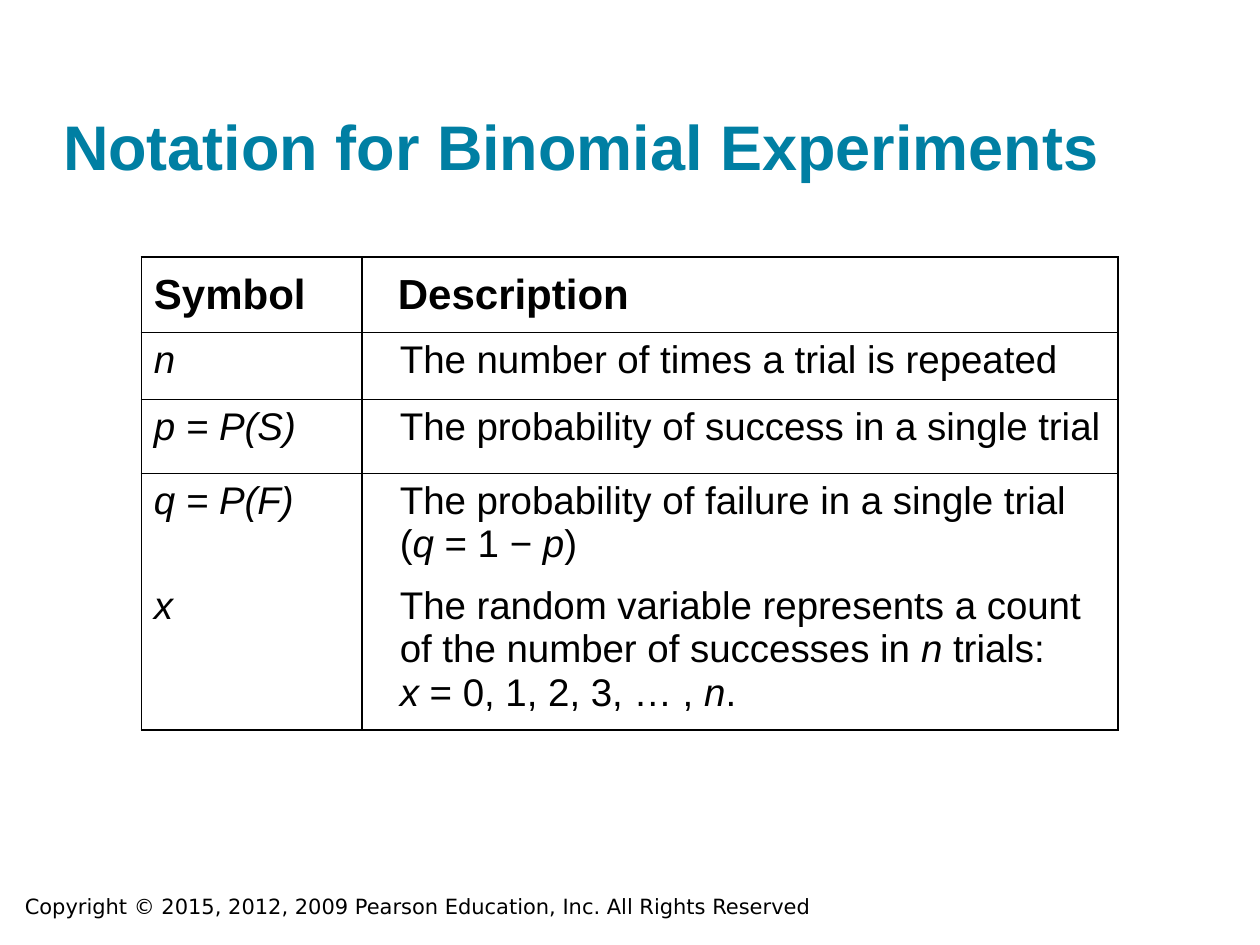
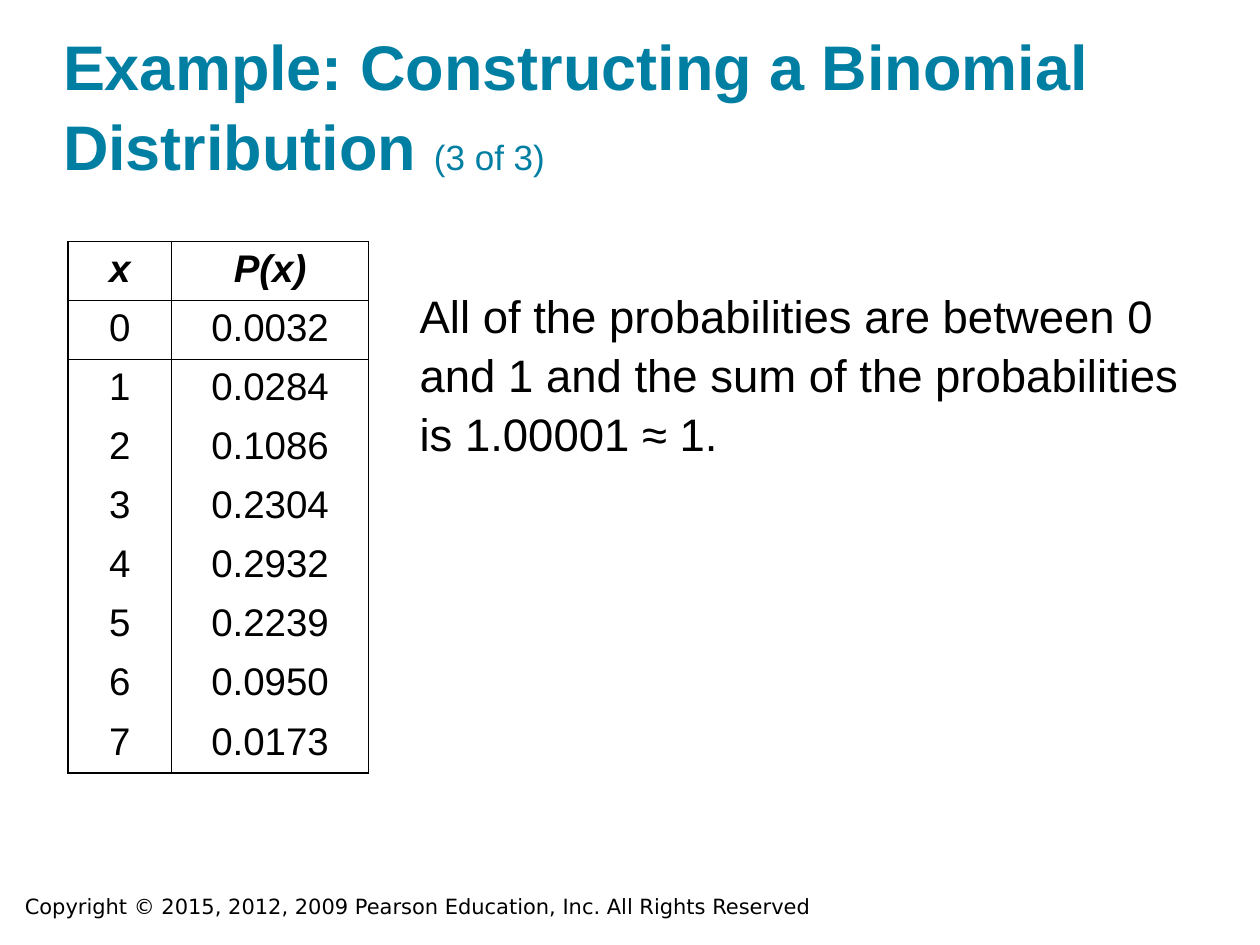
"""Build two slides on binomial experiments: notation and a distribution."""
from lxml.etree import SubElement
from pptx import Presentation
from pptx.dml.color import RGBColor
from pptx.enum.text import MSO_ANCHOR, MSO_AUTO_SIZE, PP_ALIGN
from pptx.oxml.ns import qn
from pptx.util import Cm, Pt

TEAL = RGBColor(0x00, 0x7F, 0xA3)
BLACK = RGBColor(0x00, 0x00, 0x00)
WHITE = RGBColor(0xFF, 0xFF, 0xFF)
FONT = "Arial"
PLAIN = "{2D5ABB26-0587-4C30-8999-92F81FD0307C}"
NOTICE = "Copyright © 2015, 2012, 2009 Pearson Education, Inc. All Rights Reserved"


def write(frame, text, size, color=BLACK, bold=False, font=FONT):
    """Write text into a frame; parts between asterisks are italic."""
    para = frame.paragraphs[0]
    for row, line in enumerate(text.split("\n")):
        if row:
            para.add_line_break()
        for part, words in enumerate(line.split("*")):
            if words:
                run = para.add_run()
                run.text = words
                run.font.name = font
                run.font.size = Pt(size)
                run.font.bold = bold
                run.font.italic = part % 2 == 1
                run.font.color.rgb = color
    return para


def grid(slide, left, top, widths, heights, rows, rules, head):
    """Add a table with upright lines throughout and level lines at rules."""
    frame = slide.shapes.add_table(len(rows), len(widths), Cm(left), Cm(top),
                                   Cm(sum(widths)), Cm(sum(heights)))
    table = frame.table
    table._tbl.tblPr.find(qn("a:tableStyleId")).text = PLAIN
    for col, width in zip(table.columns, widths):
        col.width = Cm(width)
    for r, texts in enumerate(rows):
        table.rows[r].height = Cm(heights[r])
        for c, text in enumerate(texts):
            cell = table.cell(r, c)
            write(cell.text_frame, text, 22 if r else head, bold=r == 0)
            sides = ["lnL", "lnR"]
            if r in rules:
                sides.append("lnT")
            if r + 1 in rules:
                sides.append("lnB")
            for side in sides:
                line = SubElement(cell._tc.get_or_add_tcPr(), qn("a:" + side), w="12700")
                fill = SubElement(line, qn("a:solidFill"))
                SubElement(fill, qn("a:srgbClr"), val=str(BLACK))
            cell.fill.solid()
            cell.fill.fore_color.rgb = WHITE
    return table


deck = Presentation()
deck.slide_width, deck.slide_height = Cm(25.4), Cm(19.05)

titles = [["Notation for Binomial Experiments"],
          ["Example: Constructing a Binomial Distribution ", "(3 of 3)"]]
slides = []
for parts in titles:
    slide = deck.slides.add_slide(deck.slide_layouts[5])
    slides.append(slide)
    title = slide.shapes.title
    title.left, title.top, title.width, title.height = Cm(1.27), Cm(0.65), Cm(22.86), Cm(3.05)
    frame = title.text_frame
    frame.margin_left = frame.margin_right = frame.margin_top = frame.margin_bottom = 0
    frame.vertical_anchor = MSO_ANCHOR.BOTTOM
    frame.auto_size = MSO_AUTO_SIZE.NONE
    for n, part in enumerate(parts):
        para = write(frame, part, 20 if n else 36, TEAL, bold=n == 0)
    para.alignment = PP_ALIGN.LEFT
    para.line_spacing = 1.07
    foot = slide.shapes.add_textbox(Cm(0.25), Cm(17.88), Cm(19.89), Cm(0.77))
    foot.text_frame.word_wrap = True
    write(foot.text_frame, NOTICE, 12, font="DejaVu Sans")

first, second = slides

terms = [
    ("Symbol", "Description"),
    ("*n*", "The number of times a trial is repeated"),
    ("*p = P(S)*", "The probability of success in a single trial"),
    ("*q = P(F)*", "The probability of failure in a single trial\n(*q* = 1 − *p*)"),
    ("*x*", "The random variable represents a count of the number of successes "
            "in *n* trials:\n*x* = 0, 1, 2, 3, … , *n*."),
]
table = grid(first, 2.85, 5.18, [4.45, 15.24], [1.52, 1.35, 1.5, 2.03, 2.94],
             terms, {0, 1, 2, 5}, 24)
for r in range(len(terms)):
    table.cell(r, 1).margin_left = Cm(0.76 if r else 0.72)
for cell in table.rows[0].cells:
    cell.vertical_anchor = MSO_ANCHOR.MIDDLE

odds = ["0.0032", "0.0284", "0.1086", "0.2304", "0.2932", "0.2239", "0.0950", "0.0173"]
rows = [("*x*", "*P(x)*")] + [(str(x), p) for x, p in enumerate(odds)]
table = grid(second, 1.37, 4.87, [2.09, 3.97], [1.19] * len(rows), rows,
             {0, 1, len(rows)}, 22)
for cell in table.iter_cells():
    cell.text_frame.paragraphs[0].alignment = PP_ALIGN.CENTER

note = second.shapes.add_textbox(Cm(8.46), Cm(5.72), Cm(15.67), Cm(3.38))
frame = note.text_frame
frame.word_wrap = True
frame.margin_left = frame.margin_right = frame.margin_top = frame.margin_bottom = 0
para = write(frame, "All of the probabilities are between 0 and 1 and the sum "
                    "of the probabilities is 1.00001 ≈ 1.", 26)
para.line_spacing = 1.08

deck.save("out.pptx")
